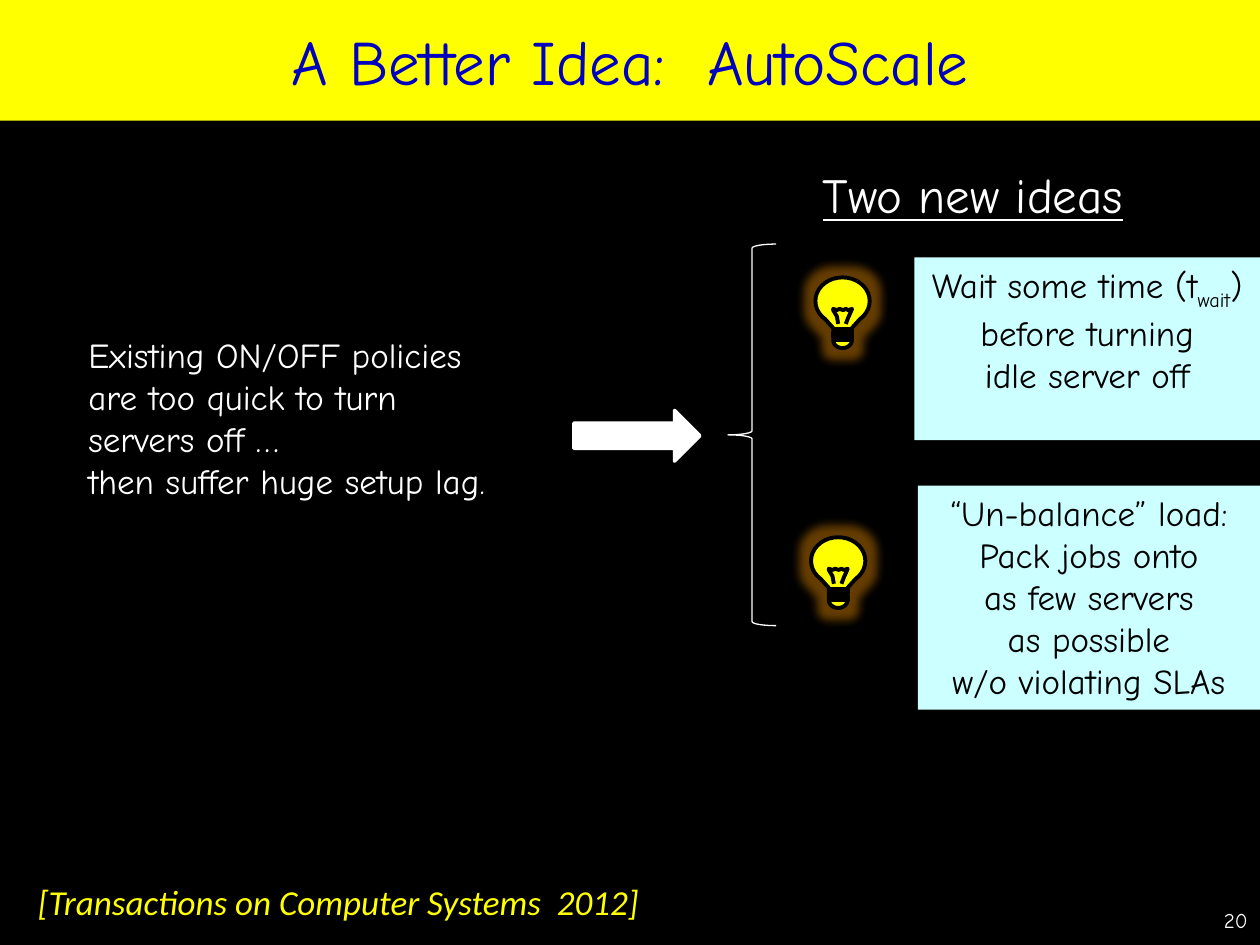
from math import cos, radians, sin

from lxml import etree
from pptx import Presentation
from pptx.dml.color import RGBColor
from pptx.enum import shapes, text
from pptx.util import Pt

BLACK = RGBColor(0x00, 0x00, 0x00)
WHITE = RGBColor(0xFF, 0xFF, 0xFF)
YELLOW = RGBColor(0xFF, 0xFF, 0x00)
NAVY = RGBColor(0x00, 0x00, 0xBF)
PALE_CYAN = RGBColor(0xCC, 0xFF, 0xFF)
GLOW = RGBColor(0xFF, 0x99, 0x00)

DRAWING = "http://schemas.openxmlformats.org/drawingml/2006/main"
LEFT, CENTER, RIGHT = text.PP_ALIGN.LEFT, text.PP_ALIGN.CENTER, text.PP_ALIGN.RIGHT
TOP, MIDDLE = text.MSO_ANCHOR.TOP, text.MSO_ANCHOR.MIDDLE


def write(box, lines, color, align=LEFT, anchor=TOP, **formats):
    """Fill a box with lines; a line is a list of (words, own formats) spans."""
    frame = box.text_frame
    frame.word_wrap = True
    frame.auto_size = text.MSO_AUTO_SIZE.NONE
    frame.vertical_anchor = anchor
    for number, line in enumerate(lines):
        para = frame.add_paragraph() if number else frame.paragraphs[0]
        para.alignment = align
        for words, own in line:
            span = para.add_run()
            span.text = words
            span.font.color.rgb = color
            settings = {"name": "Comic Neue", "size": Pt(20), **formats, **own}
            for name, value in settings.items():
                if name == "baseline":
                    span._r.get_or_add_rPr().set(name, value)
                else:
                    setattr(span.font, name, value)


def arc(center_x, center_y, radius_x, radius_y, start, end):
    """Points along an ellipse, every 10 degrees, clockwise from the right."""
    return [
        (center_x + radius_x * cos(radians(angle)), center_y + radius_y * sin(radians(angle)))
        for angle in range(start, end + 1, 10)
    ]


deck = Presentation()
deck.slide_width, deck.slide_height = Pt(720), Pt(540)
page = deck.slides.add_slide(deck.slide_layouts[5])
page.background.fill.solid()
page.background.fill.fore_color.rgb = BLACK

# Title band
title = page.shapes.title
title.left, title.top, title.width, title.height = Pt(0), Pt(0), Pt(720), Pt(69)
title.fill.solid()
title.fill.fore_color.rgb = YELLOW
write(title, [[("A Better Idea:  AutoScale", {})]], NAVY, CENTER, MIDDLE, size=Pt(36))

# Plain texts: problem, heading, source and page number
problem = [
    [("Existing ON/OFF policies", {})],
    [("are too quick to turn", {})],
    [("servers off …", {})],
    [("then suffer huge setup lag", {}), (".", {"size": Pt(18)})],
]
heading = [[("Two new ideas", {})]]
source = [[("[Transactions on Computer Systems  2012]", {})]]
plain_texts = [
    ((16.5, 187, 294.5, 104.5), 34, problem, WHITE, {}),
    ((463, 90.5, 203, 41), 7.2, heading, WHITE, {"size": Pt(28), "underline": True}),
    ((14.5, 499.5, 361, 32), 7.2, source, YELLOW, {"name": "Calibri", "italic": True}),
    ((552, 511, 168, 29), 7.2, [[("20", {})]], WHITE,
     {"size": Pt(12), "align": RIGHT, "anchor": MIDDLE}),
]
for place, indent, lines, color, formats in plain_texts:
    box = page.shapes.add_textbox(*map(Pt, place))
    box.text_frame.margin_left = Pt(indent)
    write(box, lines, color, **formats)

# Arrow leading to the brace
arrow = page.shapes.add_shape(
    shapes.MSO_SHAPE.RIGHT_ARROW, Pt(328), Pt(234.5), Pt(72), Pt(29))
arrow.shadow.inherit = False
arrow.fill.solid()
arrow.fill.fore_color.rgb = WHITE
arrow.line.color.rgb = WHITE
arrow.line.width = Pt(2)

brace = page.shapes.add_shape(
    shapes.MSO_SHAPE.LEFT_BRACE, Pt(416), Pt(139.5), Pt(27.5), Pt(218))
brace.shadow.inherit = False
brace.fill.background()
brace.line.color.rgb = WHITE
brace.line.width = Pt(0.75)

# Idea cards
wait_idea = [
    [("Wait some time (t", {}), ("wait", {"baseline": "-25000"}), (")", {})],
    [("before turning", {})],
    [("idle server off", {})],
]
pack_idea = [
    [("“Un-balance” load: Pack jobs onto", {})],
    [("as few servers", {})],
    [("as possible", {})],
    [("w/o violating SLAs", {})],
]
for left, top, height, lines in ((522.5, 147, 104.5, wait_idea), (524.5, 277.5, 128, pack_idea)):
    card = page.shapes.add_shape(
        shapes.MSO_SHAPE.RECTANGLE, Pt(left), Pt(top), Pt(720 - left), Pt(height))
    card.shadow.inherit = False
    card.fill.solid()
    card.fill.fore_color.rgb = PALE_CYAN
    card.line.fill.background()
    write(card, lines, BLACK, CENTER)

# Light bulbs: glowing glass, then filament and screw base as open lines
glass = (arc(15.5, 13.5, 15.5, 13.5, 130, 410) + [(20.8, 29)]
         + arc(15.5, 36, 5.3, 4.4, 0, 180) + [(10.2, 29)])
filament = [(13, 26.6), (12.2, 22.3), (10.1, 18.7), (10.1, 18), (12.2, 18.7), (13.7, 18),
            (15.8, 18.7), (17.3, 18), (18.7, 18.7), (20.9, 18), (18.7, 23), (17.3, 26.6)]
base = [(10.1, 29.5), (20.9, 29.5), (20.9, 31.7), (10.1, 31.7),
        (10.1, 33.8), (20.9, 33.8), (20.9, 36), (10.1, 36)]
for left, top in ((466, 158.5), (463.5, 307)):
    for outline, filled in ((glass, True), (filament, False), (base, False)):
        points = [(Pt(left + x), Pt(top + y)) for x, y in outline]
        builder = page.shapes.build_freeform(*points[0])
        builder.add_line_segments(points[1:], close=filled)
        part = builder.convert_to_shape()
        part.shadow.inherit = False
        part.line.color.rgb = BLACK
        part.line.width = Pt(2.25)
        if filled:
            part.fill.solid()
            part.fill.fore_color.rgb = YELLOW
            effects = part._element.spPr.find(f"{{{DRAWING}}}effectLst")
            glow = etree.SubElement(effects, f"{{{DRAWING}}}glow", rad=str(Pt(11)))
            tint = etree.SubElement(glow, f"{{{DRAWING}}}srgbClr", val=str(GLOW))
            etree.SubElement(tint, f"{{{DRAWING}}}alpha", val="40000")
        else:
            part.fill.background()

deck.save("out.pptx")
